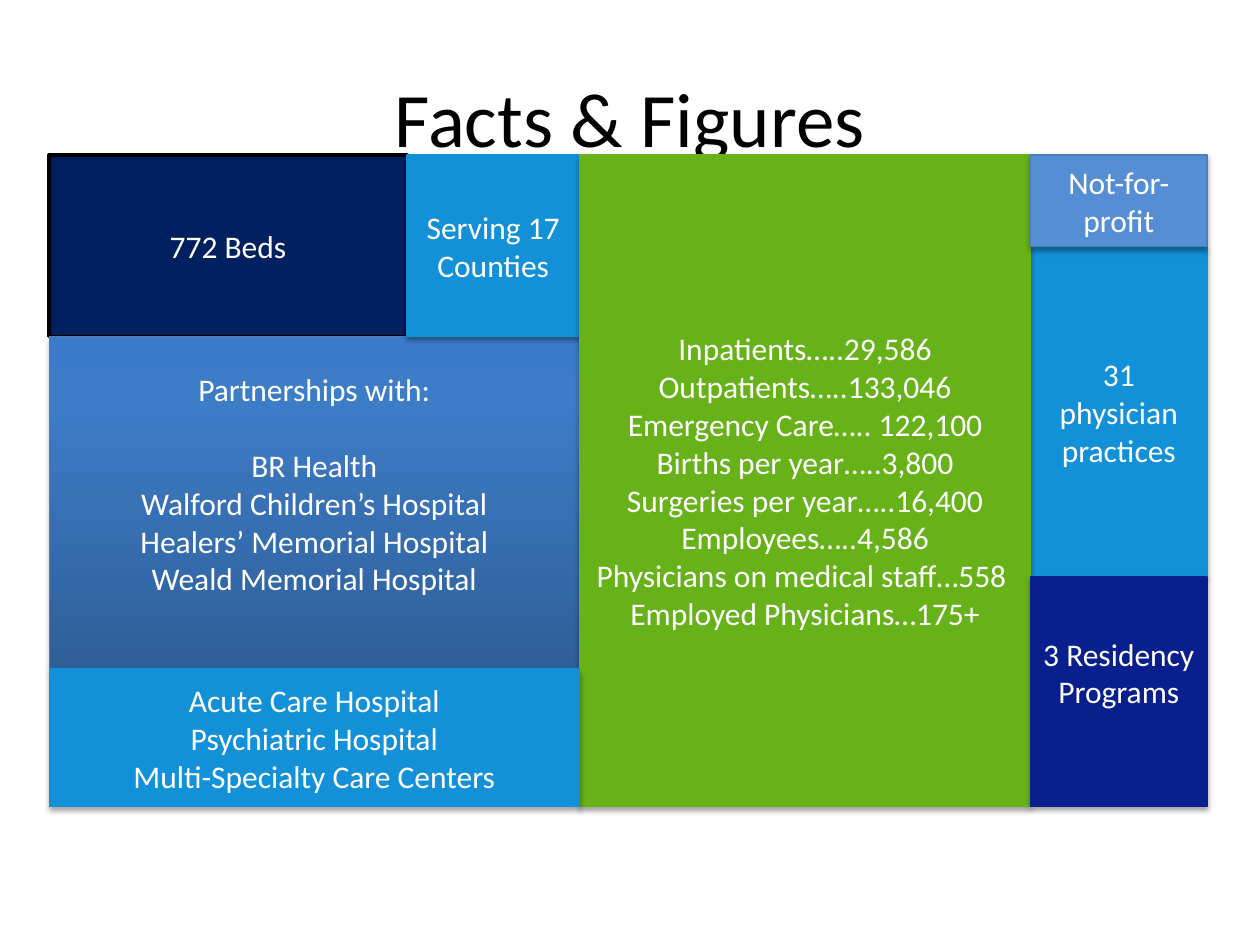
from copy import deepcopy
from dataclasses import dataclass

from lxml.etree import SubElement
from pptx import Presentation
from pptx.dml.color import RGBColor
from pptx.enum.shapes import MSO_SHAPE
from pptx.enum.text import MSO_ANCHOR, PP_ALIGN
from pptx.oxml.ns import qn
from pptx.util import Inches, Pt


@dataclass(frozen=True)
class Theme:
    font: str = "Calibri"
    title_size: float = 44
    body_size: float = 18
    line_height: float = 22
    black: str = "000000"
    white: str = "FFFFFF"
    navy: str = "002060"
    sky: str = "1291D8"
    green: str = "67B218"
    royal: str = "091F8E"
    steel: str = "558ED5"
    outline: str = "4B7EBC"
    gradient: tuple = ((0, "2F5F99"), (0.8, "3D7CC7"), (1, "3A7CCB"))


@dataclass(frozen=True)
class Tile:
    columns: tuple[int, int]
    rows: tuple[int, int]
    lines: tuple[str, ...]
    fill: str | tuple
    line: str
    line_width: float = 0.75
    shadow: bool = True
    heading: bool = False
    raised: bool = False


THEME = Theme()
COLUMN_EDGES = (0.39, 3.23, 4.6, 8.18, 9.58)
ROW_EDGES = (1.23, 1.96, 2.67, 4.58, 5.31, 6.4)

TILES = (
    Tile((0, 1), (0, 2), ("772 Beds",), THEME.navy, THEME.black, 2, shadow=False),
    Tile((0, 2), (2, 4), (
        "Partnerships with:",
        "BR Health",
        "Walford Children’s Hospital",
        "Healers’ Memorial Hospital",
        "Weald Memorial Hospital",
    ), THEME.gradient, THEME.outline, heading=True, raised=True),
    Tile((3, 4), (1, 3), ("31 physician practices",), THEME.sky, THEME.sky),
    Tile((1, 2), (0, 2), ("Serving 17 Counties",), THEME.sky, THEME.sky),
    Tile((2, 3), (0, 5), (
        "Inpatients…..29,586",
        "Outpatients…..133,046",
        "Emergency Care….. 122,100",
        "Births per year…..3,800",
        "Surgeries per year…..16,400",
        "Employees…..4,586",
        "Physicians on medical staff…558 ",
        "Employed Physicians…175+",
    ), THEME.green, THEME.green),
    Tile((0, 2), (4, 5), (
        "Acute Care Hospital",
        "Psychiatric Hospital",
        "Multi-Specialty Care Centers",
    ), THEME.sky, THEME.sky),
    Tile((3, 4), (3, 5), ("3 Residency Programs",), THEME.royal, THEME.royal, raised=True),
    Tile((3, 4), (0, 1), ("Not-for-profit",), THEME.steel, THEME.outline),
)


def set_attributes(target, values: dict) -> None:
    for name, value in values.items():
        setattr(target, name, value)


def format_paragraph(paragraph, size: float, color: str) -> None:
    paragraph.alignment = PP_ALIGN.CENTER
    set_attributes(paragraph.font, {"name": THEME.font, "size": Pt(size)})
    paragraph.font.color.rgb = RGBColor.from_string(color)


def paint_gradient(shape, stops: tuple) -> None:
    shape.fill.gradient()
    shape.fill.gradient_angle = 90
    stop_list = shape._element.spPr.find(".//" + qn("a:gsLst"))
    stop_list.append(deepcopy(stop_list[-1]))
    for stop, (position, color) in zip(shape.fill.gradient_stops, stops):
        stop.position = position
        stop.color.rgb = RGBColor.from_string(color)


def add_shadow(shape) -> None:
    effects = shape._element.spPr.find(qn("a:effectLst"))
    shadow = SubElement(effects, qn("a:outerShdw"), {
        "blurRad": str(Pt(3.1)), "dist": str(Pt(1.8)),
        "dir": "5400000", "rotWithShape": "0",
    })
    color = SubElement(shadow, qn("a:srgbClr"), val=THEME.black)
    SubElement(color, qn("a:alpha"), val="35000")


def add_tile(slide, tile: Tile) -> None:
    left, right = (COLUMN_EDGES[edge] for edge in tile.columns)
    top, bottom = (ROW_EDGES[edge] for edge in tile.rows)
    shape = slide.shapes.add_shape(
        MSO_SHAPE.RECTANGLE, Inches(left), Inches(top),
        Inches(right - left), Inches(bottom - top))
    if isinstance(tile.fill, tuple):
        paint_gradient(shape, tile.fill)
    else:
        shape.fill.solid()
        shape.fill.fore_color.rgb = RGBColor.from_string(tile.fill)
    shape.line.color.rgb = RGBColor.from_string(tile.line)
    shape.line.width = Pt(tile.line_width)
    shape.shadow.inherit = False
    if tile.shadow:
        add_shadow(shape)
    frame = shape.text_frame
    set_attributes(frame, {"word_wrap": True, "vertical_anchor": MSO_ANCHOR.MIDDLE})
    if tile.raised:
        frame.margin_bottom += Pt(THEME.line_height)
    frame.text = "\n".join(tile.lines)
    for paragraph in frame.paragraphs:
        format_paragraph(paragraph, THEME.body_size, THEME.white)
    if tile.heading:
        frame.paragraphs[0].space_after = Pt(THEME.line_height)


def add_title(slide, text: str) -> None:
    title = slide.shapes.title
    set_attributes(title, {
        "left": Inches(0.5), "top": Inches(0.3),
        "width": Inches(9), "height": Inches(1.25), "text": text,
    })
    title.text_frame.vertical_anchor = MSO_ANCHOR.MIDDLE
    format_paragraph(title.text_frame.paragraphs[0], THEME.title_size, THEME.black)


def main() -> None:
    presentation = Presentation()
    set_attributes(presentation, {"slide_width": Inches(10), "slide_height": Inches(7.5)})
    slide = presentation.slides.add_slide(presentation.slide_layouts.get_by_name("Title Only"))
    add_title(slide, "Facts & Figures")
    for tile in TILES:
        add_tile(slide, tile)
    presentation.save("out.pptx")


if __name__ == "__main__":
    main()
